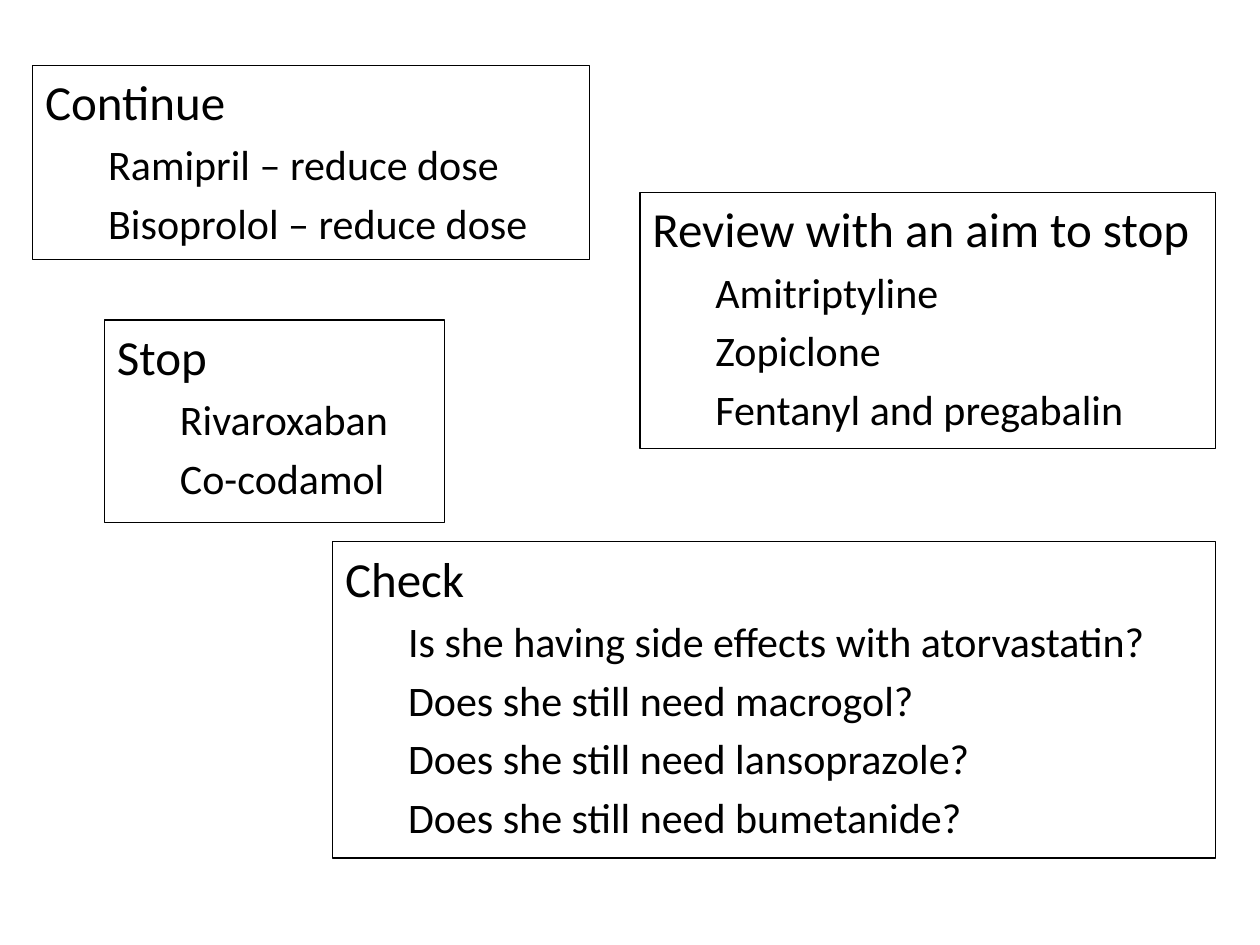
from dataclasses import dataclass

from pptx import Presentation
from pptx.dml.color import RGBColor
from pptx.enum.text import MSO_ANCHOR, MSO_AUTO_SIZE
from pptx.util import Inches, Pt

TOP = MSO_ANCHOR.TOP
FIXED = MSO_AUTO_SIZE.NONE


@dataclass(frozen=True)
class Theme:
    """Colours, font and sizes shared by every box."""
    font: str = "Calibri"
    ink: RGBColor = RGBColor(0, 0, 0)
    heading: int = 28
    item: int = 24
    line: float = 0.75
    gap: float = 0.2
    indent: float = 0.5


THEME = Theme()
UNIT = Inches(0.01)
COLUMNS, ROWS = 1000, 750

GROUPS = [
    ((83, 254, 270, 161), "Stop", ["Rivaroxaban", "Co-codamol"]),
    ((508, 153, 457, 203), "Review with an aim to stop",
     ["Amitriptyline", "Zopiclone", "Fentanyl and pregabalin"]),
    ((26, 52, 442, 154), "Continue",
     ["Ramipril – reduce dose", "Bisoprolol – reduce dose"]),
    ((264, 430, 701, 251), "Check",
     ["Is she having side effects with atorvastatin?",
      "Does she still need macrogol?",
      "Does she still need lansoprazole?",
      "Does she still need bumetanide?"]),
]


def style_paragraph(p, text, size, level):
    """Fill a paragraph and set its font, spacing and indent."""
    p.text = text
    p.level = level
    p.space_before = Pt(size * THEME.gap)
    p.font.name = THEME.font
    p.font.size = Pt(size)
    p.font.color.rgb = THEME.ink
    pPr = p._p.get_or_add_pPr()
    pPr.set("marL", str(Inches(THEME.indent * level)))
    pPr.set("indent", "0")


def add_group(slide, box, heading, items):
    """Place an outlined box with a heading and its indented items."""
    sp = slide.shapes.add_textbox(*(UNIT * n for n in box))
    sp.line.color.rgb = THEME.ink
    sp.line.width = Pt(THEME.line)
    tf = sp.text_frame
    tf.word_wrap = True
    tf.auto_size = FIXED
    tf.vertical_anchor = TOP
    style_paragraph(tf.paragraphs[0], heading, THEME.heading, 0)
    for item in items:
        style_paragraph(tf.add_paragraph(), item, THEME.item, 1)


def main():
    """Build the slide of medication groups."""
    prs = Presentation()
    prs.slide_width, prs.slide_height = UNIT * COLUMNS, UNIT * ROWS
    slide = prs.slides.add_slide(prs.slide_layouts[6])
    for box, heading, items in GROUPS:
        add_group(slide, box, heading, items)
    prs.save("out.pptx")


if __name__ == "__main__":
    main()
